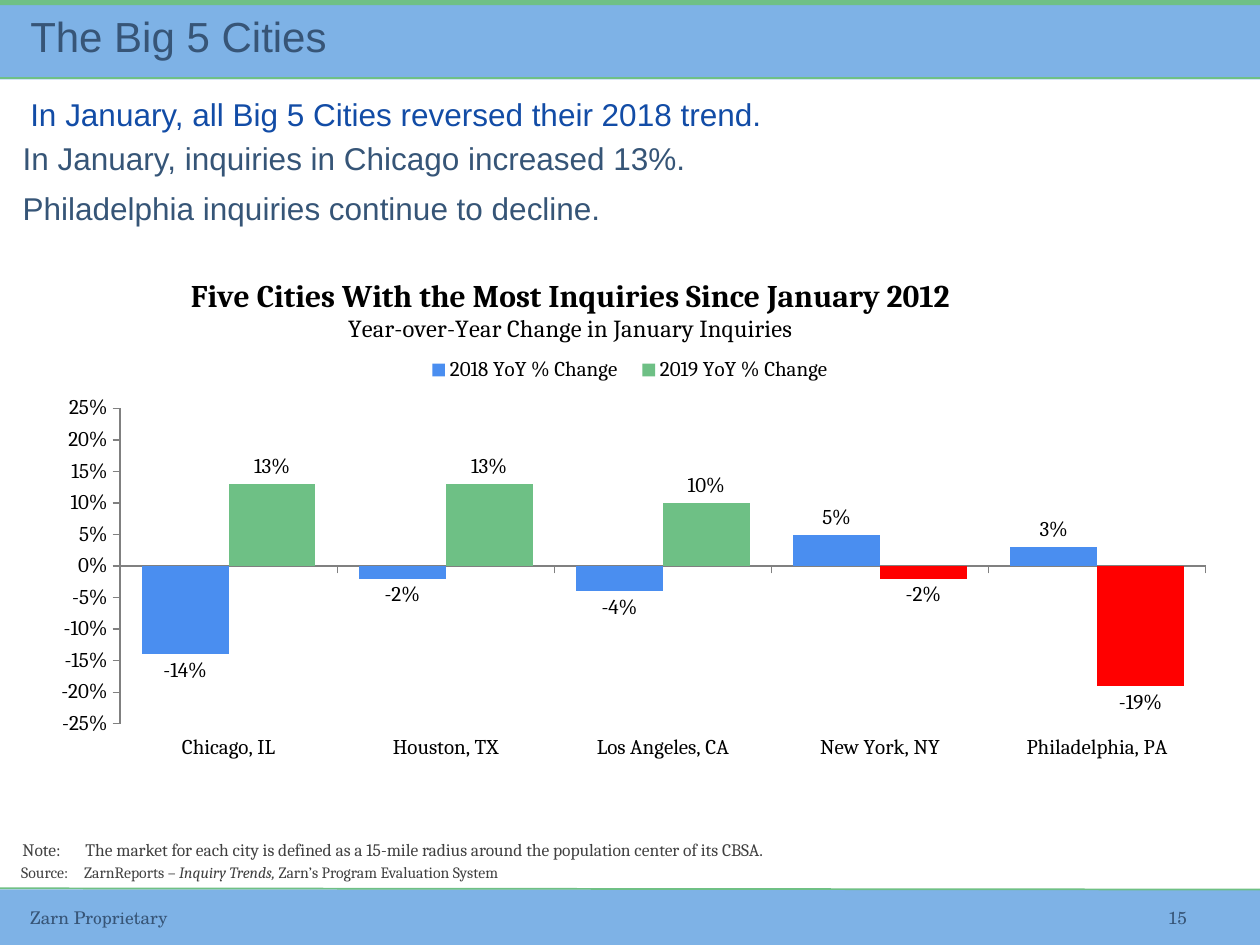
"""Builds the slide on inquiry trends in the Big 5 Cities."""
from pptx import Presentation
from pptx.chart.data import CategoryChartData
from pptx.dml.color import RGBColor
from pptx.enum.chart import XL_CHART_TYPE as ChartType
from pptx.enum.chart import XL_LABEL_POSITION as LabelPosition
from pptx.enum.chart import XL_LEGEND_POSITION as LegendPosition
from pptx.enum.chart import XL_TICK_LABEL_POSITION as TickLabels
from pptx.enum.chart import XL_TICK_MARK as TickMark
from pptx.enum.shapes import MSO_CONNECTOR as Connector
from pptx.enum.shapes import MSO_SHAPE as Shape
from pptx.enum.text import MSO_ANCHOR as Anchor
from pptx.enum.text import MSO_AUTO_SIZE as AutoSize
from pptx.enum.text import PP_ALIGN as Align
from pptx.oxml.xmlchemy import OxmlElement as Element
from pptx.util import Inches, Pt


def color(value):
    return RGBColor.from_string(value)


def set_font(font, size, name, fill, bold=False, italic=False):
    font.size, font.name, font.bold, font.italic = Pt(size), name, bold, italic
    font.color.rgb = color(fill)


def write(para, text, align=Align.LEFT, line=None, before=0, after=0, tab=None, **style):
    """Text is a string, or a list of (string, italic) pairs."""
    para.alignment, para.line_spacing = align, line
    para.space_before, para.space_after = Pt(before), Pt(after)
    properties = para._p.get_or_add_pPr()
    properties.set("marL", "0")
    properties.set("indent", "0")
    properties.append(Element("a:buNone"))
    if tab:
        stops, stop = Element("a:tabLst"), Element("a:tab")
        stop.set("pos", str(Inches(tab)))
        stop.set("algn", "l")
        stops.append(stop)
        properties.append(stops)
    for words, italic in [(text, False)] if isinstance(text, str) else text:
        span = para.add_run()
        span.text = words
        set_font(span.font, italic=italic, **style)


def place(part, position, **layout):
    """Gives a chart part a fixed layout, as fractions of the chart."""
    for old in part.findall(Element("c:layout").tag):
        part.remove(old)
    outer, manual = Element("c:layout"), Element("c:manualLayout")
    outer.append(manual)
    for name, value in layout.items():
        item = Element(f"c:{name}")
        item.set("val", str(value))
        manual.append(item)
    part.insert(position, outer)


class Page:
    """Holds the style and the current slide."""

    blue, green, red = "7EB2E6", "6FC085", "FF0000"
    slate, ink = "375577", "000000"
    sans, serif, footer = "Arial", "Cambria", "TeX Gyre Schola"

    def __init__(self, slide):
        self.slide, self.shapes = slide, slide.shapes

    def band(self, top, height, fill):
        shape = self.shapes.add_shape(Shape.RECTANGLE, 0, Inches(top), Inches(10), Inches(height))
        shape.shadow.inherit = False
        shape.fill.solid()
        shape.fill.fore_color.rgb = color(fill)
        shape.line.fill.background()

    def rule(self, start, end):
        line = self.shapes.add_connector(
            Connector.STRAIGHT, 0, Inches(start), Inches(10), Inches(end))
        line.line.color.rgb, line.line.width = color(self.green), Pt(1)
        line._element.spPr.append(Element("a:effectLst"))

    def fill_box(self, box, area, texts, anchor=Anchor.TOP, **style):
        box.left, box.top, box.width, box.height = map(Inches, area)
        frame = box.text_frame
        frame.word_wrap, frame.auto_size = True, AutoSize.NONE
        frame.vertical_anchor = anchor
        before = style.pop("before", 0)
        for index, text in enumerate(texts):
            para = frame.add_paragraph() if index else frame.paragraphs[0]
            write(para, text, before=before if index else 0, **style)

    def text(self, area, text, **style):
        self.fill_box(self.shapes.add_textbox(*map(Inches, area)), area, [text], **style)

    def title(self, area, text):
        self.fill_box(self.shapes.title, area, [text], anchor=Anchor.MIDDLE,
                      line=0.89, size=24, name=self.sans, fill=self.slate)

    def body(self, index, area, texts, fill):
        self.fill_box(self.slide.placeholders[index], area, texts,
                      line=0.94, before=4, after=4, size=18, name=self.sans, fill=fill)

    def axis(self, axis):
        axis.has_major_gridlines = False
        axis.major_tick_mark, axis.minor_tick_mark = TickMark.OUTSIDE, TickMark.NONE
        axis.format.line.color.rgb = color("808080")
        axis.format.line.width = Pt(0.75)

    def chart(self, area, headings, cities, series):
        data = CategoryChartData(number_format="0%")
        data.categories = cities
        for name, values, _ in series:
            data.add_series(name, values)
        chart = self.shapes.add_chart(
            ChartType.COLUMN_CLUSTERED, *map(Inches, area), data).chart
        set_font(chart.font, 12, self.serif, self.ink)

        frame = chart.chart_title.text_frame
        for index, (heading, size, bold) in enumerate(headings):
            para = frame.add_paragraph() if index else frame.paragraphs[0]
            para.alignment = Align.CENTER
            span = para.add_run()
            span.text = heading
            set_font(span.font, size, self.serif, self.ink, bold)
        chart.has_legend = True
        chart.legend.position = LegendPosition.TOP
        chart.legend.include_in_layout = False

        values, categories = chart.value_axis, chart.category_axis
        self.axis(values)
        self.axis(categories)
        values.minimum_scale, values.maximum_scale, values.major_unit = -0.25, 0.25, 0.05
        values.tick_labels.number_format = "0%"
        values.tick_labels.number_format_is_linked = False
        categories.tick_label_position = TickLabels.LOW

        plot = chart.plots[0]
        plot.gap_width, plot.overlap, plot.vary_by_categories = 50, 0, False
        plot.has_data_labels = True
        labels = plot.data_labels
        labels.show_value, labels.position = True, LabelPosition.OUTSIDE_END
        labels.number_format, labels.number_format_is_linked = "0%", False
        for bars, (_, _, fill) in zip(plot.series, series):
            bars.invert_if_negative = False
            bars.format.fill.solid()
            bars.format.fill.fore_color.rgb = color(fill)

        root = chart.element
        place(root.xpath("c:chart/c:title")[0], 1, xMode="edge", yMode="edge", x=0.13, y=0.02)
        place(root.xpath("c:chart/c:legend")[0], 1, xMode="edge", yMode="edge",
              x=0.32, y=0.16, w=0.36, h=0.06)
        place(root.xpath("c:chart/c:plotArea")[0], 0, layoutTarget="inner",
              xMode="edge", yMode="edge", x=0.074, y=0.257, w=0.907, h=0.549)
        return plot

    def mark(self, bars, positions):
        for position in positions:
            fill = bars.points[position].format.fill
            fill.solid()
            fill.fore_color.rgb = color(self.red)


def main():
    deck = Presentation()
    deck.slide_width, deck.slide_height = Inches(10), Inches(7.5)
    page = Page(deck.slides.add_slide(deck.slide_layouts[3]))
    holders = list(page.slide.placeholders)

    page.band(7.06, 0.44, page.blue)
    page.band(0.04, 0.59, page.blue)
    page.band(-0.01, 0.05, page.green)
    page.rule(0.62, 0.62)
    page.rule(7.05, 7.06)
    for holder in holders:
        page.shapes._spTree.append(holder._element)

    page.title((0.14, 0, 6.11, 0.62), "The Big 5 Cities")
    page.body(1, (0.14, 0.73, 9.76, 0.44),
              ["In January, all Big 5 Cities reversed their 2018 trend."], "124CA6")
    page.body(2, (0.08, 1.08, 9.76, 0.67),
              ["In January, inquiries in Chicago increased 13%.",
               "Philadelphia inquiries continue to decline."], "365577")

    plot = page.chart(
        (0.25, 2.07, 9.5, 4.56),
        [("Five Cities With the Most Inquiries Since January 2012", 18, True),
         ("Year-over-Year Change in January Inquiries", 14, False)],
        ["Chicago, IL", "Houston, TX", "Los Angeles, CA", "New York, NY", "Philadelphia, PA"],
        [("2018 YoY % Change", (-0.14, -0.02, -0.04, 0.05, 0.03), "4A8EF0"),
         ("2019 YoY % Change", (0.13, 0.13, 0.1, -0.02, -0.19), "6EC085")])
    page.mark(plot.series[1], (3, 4))

    note = {"name": page.serif, "fill": "404040"}
    page.text((0.08, 6.63, 6.59, 0.25),
              "Note:\tThe market for each city is defined as a 15-mile radius "
              "around the population center of its CBSA.",
              line=0.9, after=6, tab=0.4, size=10, **note)
    page.text((0.07, 6.8, 4.38, 0.25),
              [("Source:\tZarnReports – ", False), ("Inquiry Trends, ", True),
               ("Zarn’s Program Evaluation System", False)], tab=0.43, size=9, **note)

    footer = {"anchor": Anchor.MIDDLE, "size": 10, "name": page.footer, "fill": page.slate}
    page.text((0.14, 7.06, 2.37, 0.44), "Zarn Proprietary", **footer)
    page.text((8.69, 7.06, 1.31, 0.44), "15", align=Align.CENTER, **footer)
    deck.save("out.pptx")


if __name__ == "__main__":
    main()
